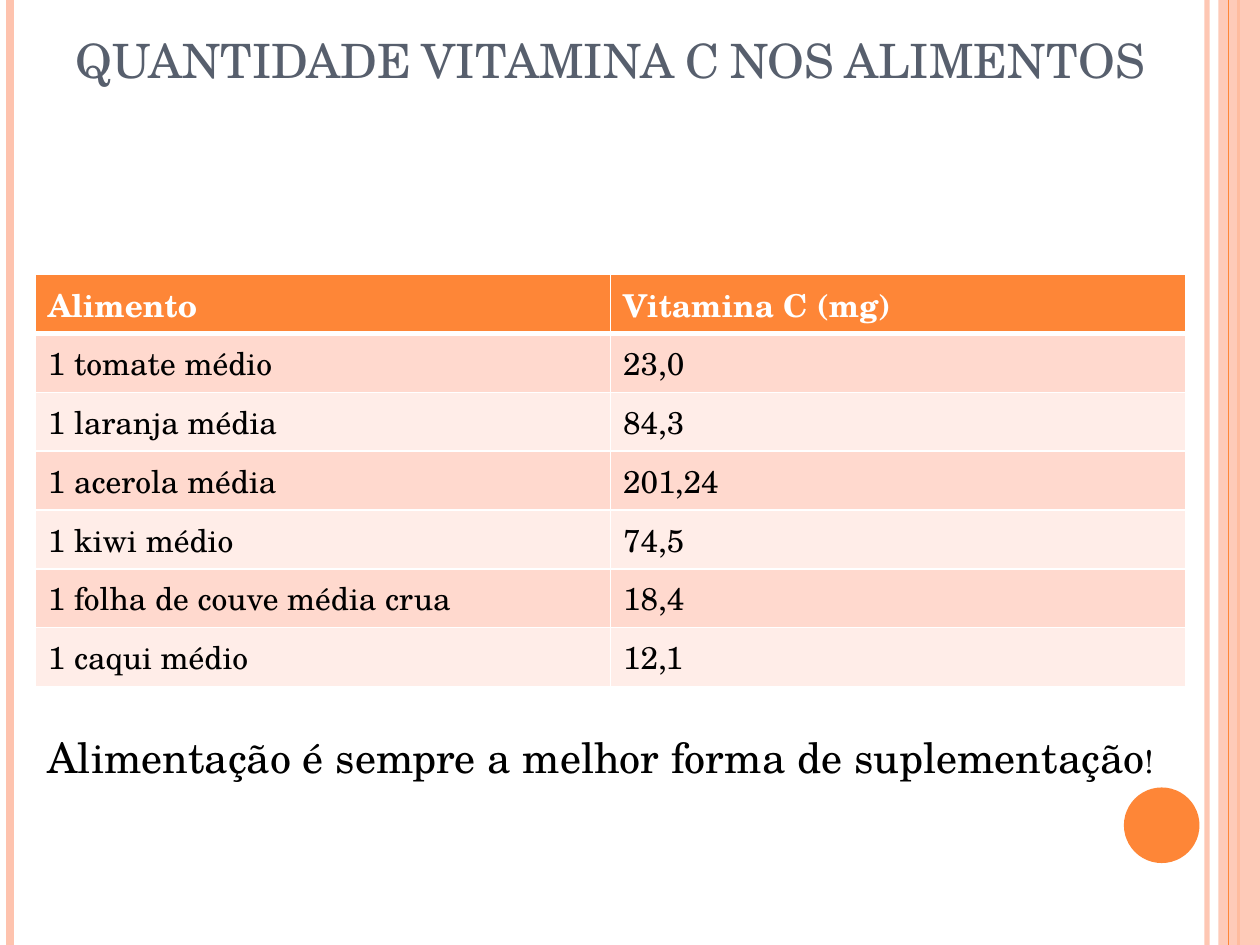
from dataclasses import dataclass

from lxml.etree import SubElement
from pptx import Presentation
from pptx.dml.color import RGBColor
from pptx.enum.shapes import MSO_CONNECTOR as CONNECTOR, MSO_SHAPE as SHAPE
from pptx.enum.text import MSO_ANCHOR as ANCHOR, MSO_AUTO_SIZE as AUTO_SIZE
from pptx.oxml.ns import qn
from pptx.util import Inches, Pt


@dataclass(frozen=True)
class Theme:
    """Colours, font and type sizes of the slide."""
    font: str = "TeX Gyre Schola"
    accent: str = "FE8637"
    pale: str = "FEC3AE"
    bands: tuple = ("FFD9CE", "FFEDE8")
    slate: str = "575F6D"
    white: str = "FFFFFF"
    black: str = "000000"
    title_size: int = 27
    closing_size: int = 24
    body_size: int = 18


THEME = Theme()
FOODS = [
    ("Alimento", "Vitamina C (mg)"),
    ("1 tomate médio", "23,0"),
    ("1 laranja média", "84,3"),
    ("1 acerola média", "201,24"),
    ("1 kiwi médio", "74,5"),
    ("1 folha de couve média crua", "18,4"),
    ("1 caqui médio", "12,1"),
]


def add_run(paragraph, text, size, color, bold=False):
    """Append a formatted run and return it."""
    run = paragraph.add_run()
    run.text = text
    formats = {"name": THEME.font, "size": Pt(size), "bold": bold}
    for name, value in formats.items():
        setattr(run.font, name, value)
    run.font.color.rgb = RGBColor.from_string(color)
    return run


def set_alpha(color_parent, percent):
    """Set the opacity of the solid colour under an element."""
    color = next(color_parent.iter(qn("a:srgbClr")))
    SubElement(color, qn("a:alpha"), val=str(percent * 1000))


def add_stripe(slide, x, height, color, width, opacity=100):
    """Draw a vertical line down the slide."""
    line = slide.shapes.add_connector(
        CONNECTOR.STRAIGHT, Inches(x), 0, Inches(x), Inches(height))
    line.line.color.rgb = RGBColor.from_string(color)
    line.line.width = Pt(width)
    properties = line._element.spPr
    if opacity < 100:
        set_alpha(properties, opacity)
    SubElement(properties, qn("a:effectLst"))


def add_solid(slide, kind, box, color, opacity=100):
    """Draw a filled shape without outline."""
    shape = slide.shapes.add_shape(kind, *map(Inches, box))
    shape.shadow.inherit = False
    shape.fill.solid()
    shape.fill.fore_color.rgb = RGBColor.from_string(color)
    shape.line.fill.background()
    if opacity < 100:
        set_alpha(shape._element.spPr, opacity)


def add_frame(slide, box):
    """Place the stripes, side band and disc within the box."""
    left, top, width, height = box
    right = left + width
    add_stripe(slide, right - 0.42, height, THEME.pale, 3, 93)
    add_stripe(slide, left + 0.08, height, THEME.pale, 4.5)
    add_stripe(slide, right - 0.17, height, THEME.accent, 1.5)
    add_solid(slide, SHAPE.RECTANGLE, (right - 0.33, top, 0.33, height), THEME.pale, 87)
    add_stripe(slide, right - 0.25, height, THEME.accent, 0.75)
    add_solid(slide, SHAPE.OVAL, (right - 1.08, top + 6.25, 0.6, 0.6), THEME.accent)


def add_title(slide, box):
    """Write the heading at the foot of its box."""
    frame = slide.shapes.add_textbox(*map(Inches, box)).text_frame
    frame.word_wrap = True
    frame.vertical_anchor = ANCHOR.BOTTOM
    run = add_run(frame.paragraphs[0], "QUANTIDADE VITAMINA C NOS ALIMENTOS",
                  THEME.title_size, THEME.slate)
    run._r.get_or_add_rPr().set("cap", "small")


def add_borders(cell, widths):
    """Draw white cell borders, given widths by side."""
    properties = cell._tc.get_or_add_tcPr()
    for side, width in widths.items():
        line = SubElement(properties, qn(f"a:ln{side}"), w=str(Pt(width)))
        fill = SubElement(line, qn("a:solidFill"))
        SubElement(fill, qn("a:srgbClr"), val=THEME.white)


def add_food_table(slide, box):
    """Fill the table of foods and their vitamin C."""
    table = slide.shapes.add_table(
        len(FOODS), len(FOODS[0]), *map(Inches, box)).table
    for index, values in enumerate(FOODS):
        header = index == 0
        fill = THEME.accent if header else THEME.bands[(index - 1) % 2]
        color = THEME.white if header else THEME.black
        widths = {"L": 1, "R": 1, "T": 3 if index == 1 else 1, "B": 3 if header else 1}
        for cell, value in zip(table.rows[index].cells, values):
            add_borders(cell, widths)
            cell.fill.solid()
            cell.fill.fore_color.rgb = RGBColor.from_string(fill)
            add_run(cell.text_frame.paragraphs[0], value, THEME.body_size, color, header)


def add_closing(slide, box):
    """Write the closing sentence on one line."""
    frame = slide.shapes.add_textbox(*map(Inches, box)).text_frame
    frame.word_wrap = False
    frame.auto_size = AUTO_SIZE.SHAPE_TO_FIT_TEXT
    paragraph = frame.paragraphs[0]
    add_run(paragraph, "Alimentação é sempre a melhor forma de suplementação",
            THEME.closing_size, THEME.black)
    add_run(paragraph, "!", THEME.body_size, THEME.black)


def main():
    """Build and save the slide."""
    presentation = Presentation()
    presentation.slide_width = Inches(10)
    presentation.slide_height = Inches(7.5)
    slide = presentation.slides.add_slide(presentation.slide_layouts[6])
    add_frame(slide, (0, 0, 10, 7.5))
    add_title(slide, (0.5, 0.29, 8.99, 0.46))
    add_food_table(slide, (0.28, 2.18, 9.13, 3.27))
    add_closing(slide, (0.28, 5.76, 9.07, 0.5))
    presentation.save("out.pptx")


if __name__ == "__main__":
    main()
